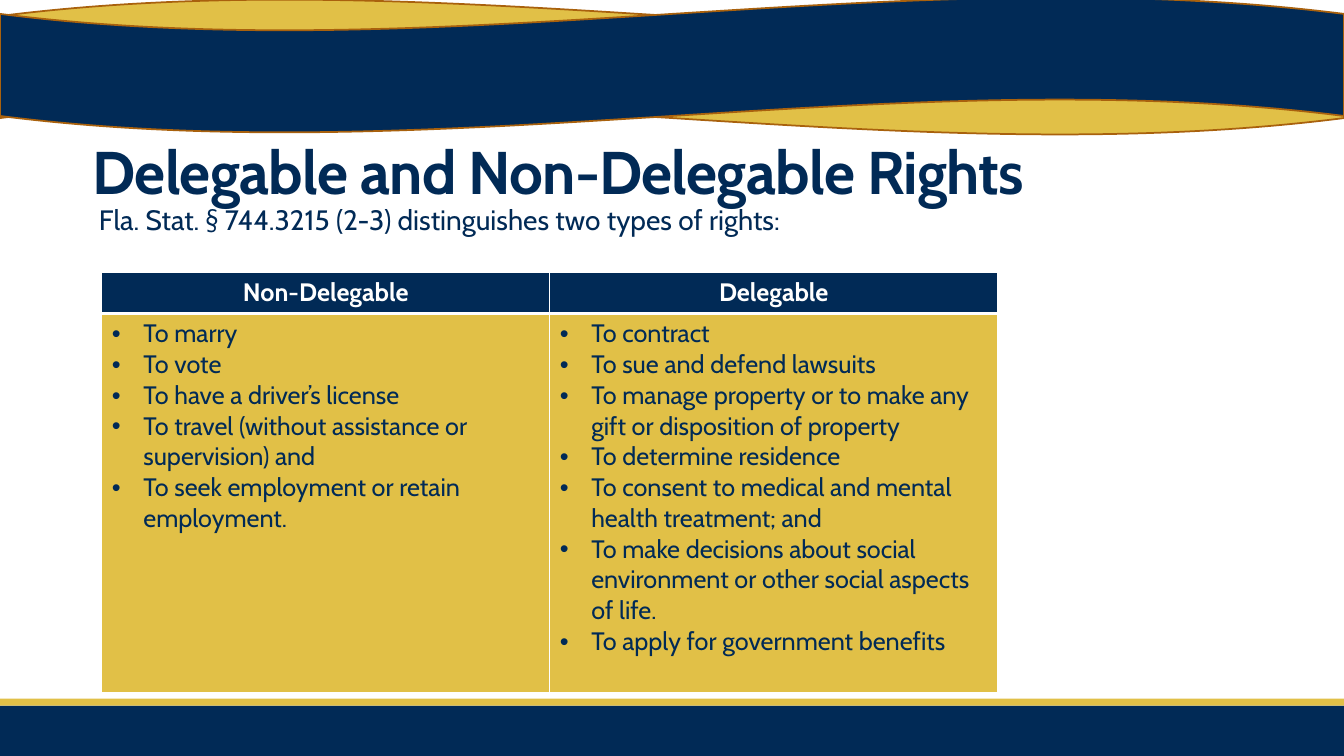
from dataclasses import dataclass

from lxml import etree
from pptx import Presentation
from pptx.dml.color import RGBColor
from pptx.enum import shapes, text
from pptx.oxml import ns
from pptx.util import Pt


@dataclass(frozen=True)
class Theme:
    navy: str = "012A56"
    gold: str = "E1C047"
    bronze: str = "A9610D"
    white: str = "FFFFFF"
    font: str = "Cabin"
    title_size: float = 43
    lead_size: float = 20
    table_size: float = 18


@dataclass(frozen=True)
class Band:
    kind: shapes.MSO_SHAPE
    top: float
    height: float
    fill: str
    outlined: bool = False
    flipped: bool = False


@dataclass(frozen=True)
class Column:
    heading: str
    rights: tuple[str, ...]


THEME = Theme()
WIDTH, HEIGHT = 960, 540
WAVE, RECT = shapes.MSO_SHAPE.WAVE, shapes.MSO_SHAPE.RECTANGLE

BANDS = (
    Band(RECT, 504, 36, THEME.navy),
    Band(RECT, 499, 5, THEME.gold),
    Band(WAVE, -0.7, 97.2, THEME.gold, outlined=True),
    Band(WAVE, -2.2, 97.2, THEME.navy, outlined=True, flipped=True),
)

COLUMNS = (
    Column("Non-Delegable", (
        "To marry",
        "To vote",
        "To have a driver’s license",
        "To travel (without assistance or supervision) and",
        "To seek employment or retain employment.",
    )),
    Column("Delegable", (
        "To contract",
        "To sue and defend lawsuits",
        "To manage property or to make any gift or disposition of property",
        "To determine residence",
        "To consent to medical and mental health treatment; and",
        "To make decisions about social environment or other social aspects of life.",
        "To apply for government benefits",
    )),
)


def rgb(color: str) -> RGBColor:
    return RGBColor.from_string(color)


def format_runs(p, size: float, color: str, bold: bool = False) -> None:
    for r in p.runs:
        r.font.name, r.font.size, r.font.bold = THEME.font, Pt(size), bold
        r.font.color.rgb = rgb(color)


def set_bullet(p, char: str = "", indent: float = 0) -> None:
    pPr = p._p.get_or_add_pPr()
    pPr.set("marL", str(Pt(indent)))
    pPr.set("indent", str(-Pt(indent)))
    if char:
        etree.SubElement(pPr, ns.qn("a:buFont")).set("typeface", "Arial")
        etree.SubElement(pPr, ns.qn("a:buChar")).set("char", char)
    else:
        etree.SubElement(pPr, ns.qn("a:buNone"))


def draw_band(slide, band: Band) -> None:
    sp = slide.shapes.add_shape(band.kind, 0, Pt(band.top), Pt(WIDTH), Pt(band.height))
    sp.shadow.inherit = False
    sp.fill.solid()
    sp.fill.fore_color.rgb = rgb(band.fill)
    if band.outlined:
        sp.line.color.rgb = rgb(THEME.bronze)
        sp.line.width = Pt(1.25)
    else:
        sp.line.fill.background()
    if band.flipped:
        sp._element.spPr.find(ns.qn("a:xfrm")).set("flipH", "1")


def fill_placeholder(sp, words: str, box: tuple[float, ...], size: float,
                     spacing: float, anchor: text.MSO_ANCHOR, bold: bool = False):
    sp.left, sp.top, sp.width, sp.height = (Pt(v) for v in box)
    tf = sp.text_frame
    tf.text = words
    tf.word_wrap, tf.auto_size = True, text.MSO_AUTO_SIZE.NONE
    tf.vertical_anchor = anchor
    p = tf.paragraphs[0]
    set_bullet(p)
    p.alignment, p.line_spacing, p.space_before = text.PP_ALIGN.LEFT, spacing, Pt(0)
    format_runs(p, size, THEME.navy, bold)
    return tf


def style_cell(cell, fill: str, top: float, bottom: float) -> None:
    tcPr = cell._tc.get_or_add_tcPr()
    for side, width in (("L", 1), ("R", 1), ("T", top), ("B", bottom)):
        ln = etree.SubElement(tcPr, ns.qn(f"a:ln{side}"), w=str(Pt(width)))
        solid = etree.SubElement(ln, ns.qn("a:solidFill"))
        etree.SubElement(solid, ns.qn("a:srgbClr")).set("val", THEME.white)
    cell.fill.solid()
    cell.fill.fore_color.rgb = rgb(fill)


def draw_table(slide, columns: tuple[Column, ...]) -> None:
    header_height, body_height, column_width = 29.5, 270.5, 320
    table = slide.shapes.add_table(
        2, len(columns), Pt(72.7), Pt(194.4),
        Pt(column_width * len(columns)), Pt(header_height + body_height)).table
    table.horz_banding = False
    table.rows[0].height, table.rows[1].height = Pt(header_height), Pt(body_height)

    for i, column in enumerate(columns):
        table.columns[i].width = Pt(column_width)
        heading, body = table.cell(0, i), table.cell(1, i)
        style_cell(heading, THEME.navy, top=1, bottom=3)
        style_cell(body, THEME.gold, top=3, bottom=1)

        heading.text_frame.text = column.heading
        p = heading.text_frame.paragraphs[0]
        p.alignment = text.PP_ALIGN.CENTER
        format_runs(p, THEME.table_size, THEME.white, bold=True)

        body.text_frame.text = "\n".join(column.rights)
        for p in body.text_frame.paragraphs:
            set_bullet(p, "•", 22.5)
            format_runs(p, THEME.table_size, THEME.navy)


def main() -> None:
    prs = Presentation()
    prs.slide_width, prs.slide_height = Pt(WIDTH), Pt(HEIGHT)
    slide = prs.slides.add_slide(prs.slide_layouts[1])
    title, lead = slide.shapes.title, slide.placeholders[1]

    # Ribbon and footer bands, kept behind the text
    for band in BANDS:
        draw_band(slide, band)
    for sp in (title, lead):
        slide.shapes._spTree.append(sp._element)

    # Title and lead-in sentence
    tf = fill_placeholder(title, "Delegable and Non-Delegable Rights",
                          (59, 36.7, 792, 114.5), THEME.title_size, 0.85,
                          text.MSO_ANCHOR.BOTTOM, bold=True)
    tf.paragraphs[0].runs[0].font._element.set("spc", "-50")
    tf = fill_placeholder(
        lead, "Fla. Stat. § 744.3215 (2-3) distinguishes two types of rights:",
        (70.6, 144, 792, 316.8), THEME.lead_size, 0.9, text.MSO_ANCHOR.TOP)
    tf.margin_left = tf.margin_right = Pt(0)

    # Comparison of rights
    draw_table(slide, COLUMNS)

    prs.save("out.pptx")


if __name__ == "__main__":
    main()
